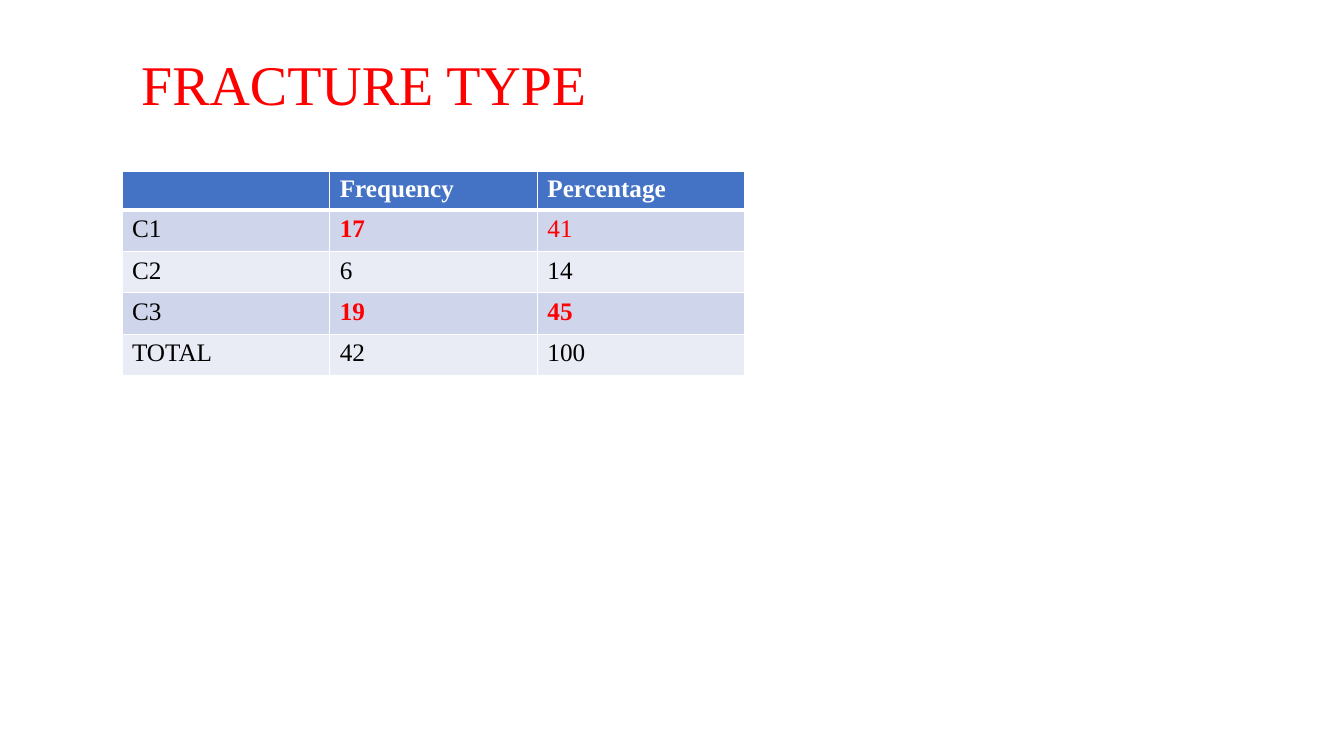
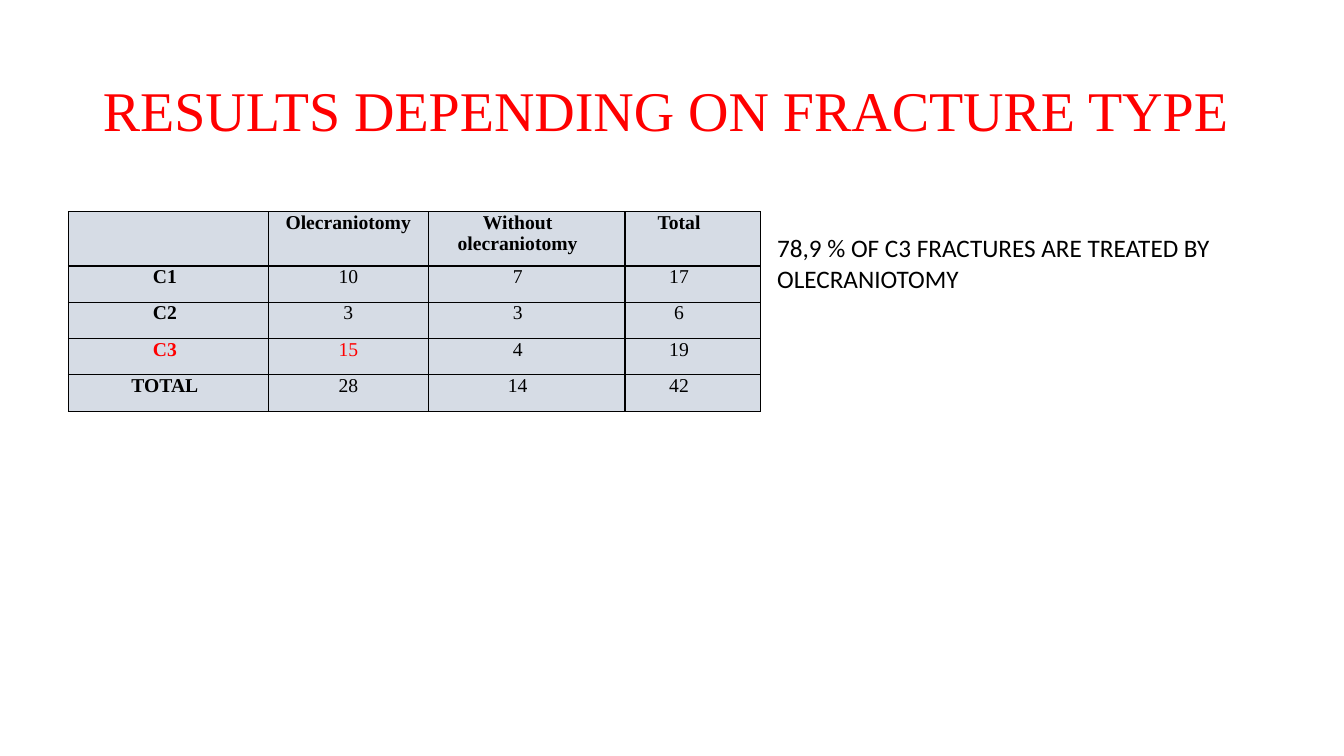
from dataclasses import dataclass
from typing import Optional

from lxml.etree import SubElement
from pptx import Presentation
from pptx.dml.color import RGBColor
from pptx.enum.text import MSO_ANCHOR, MSO_AUTO_SIZE, PP_ALIGN
from pptx.oxml.ns import qn
from pptx.util import Inches, Pt


@dataclass(frozen=True)
class Theme:
    serif: str = "Times New Roman"
    sans: str = "Calibri"
    title_size: int = 40
    body_size: int = 18
    compact_size: int = 14
    red: str = "FF0000"
    black: str = "000000"
    white: str = "FFFFFF"
    header_blue: str = "4472C4"
    band_dark: str = "CFD5EA"
    band_light: str = "E9EBF5"
    grey_blue: str = "D6DCE5"


THEME = Theme()
Box = tuple[float, float, float, float]
Spot = tuple[int, int]


@dataclass(frozen=True)
class Heading:
    text: str
    box: Box
    anchor: MSO_ANCHOR
    line_spacing: float


@dataclass(frozen=True)
class TableStyle:
    size: int
    header_fill: str
    header_color: str
    bands: tuple[str, ...]
    border: str
    header_rule: float  # points, line below the header
    align: PP_ALIGN
    header_inset: float  # inches, above and below header text
    body_inset: float
    left_inset: float


@dataclass(frozen=True)
class ResultTable:
    rows: list[list[str]]
    origin: tuple[float, float]
    widths: list[float]
    heights: list[float]
    right_insets: list[float]
    red: set[Spot]
    bold: set[Spot]
    style: TableStyle


BANDED = TableStyle(THEME.body_size, THEME.header_blue, THEME.white,
                    (THEME.band_dark, THEME.band_light), THEME.white, 3,
                    PP_ALIGN.LEFT, 0.04, 0.05, 0.1)
GRID = TableStyle(THEME.compact_size, THEME.grey_blue, THEME.black,
                  (THEME.grey_blue,), THEME.black, 1,
                  PP_ALIGN.CENTER, 0, 0, 0)


def write(frame, text: str, *, size: int, font: str = THEME.serif,
          color: str = THEME.black, bold: bool = False,
          align: PP_ALIGN = PP_ALIGN.LEFT,
          line_spacing: Optional[float] = None) -> None:
    """Put one formatted paragraph into a text frame."""
    paragraph = frame.paragraphs[0]
    paragraph.alignment = align
    if line_spacing:
        paragraph.line_spacing = line_spacing
    if not text:  # an empty cell still needs a type size for its height
        SubElement(paragraph._p, qn("a:endParaRPr"), sz=str(size * 100))
        return
    run = paragraph.add_run()
    run.text = text
    run.font.size = Pt(size)
    run.font.name = font
    run.font.bold = bold
    run.font.color.rgb = RGBColor.from_string(color)


def add_border(cell, side: str, color: str, points: float) -> None:
    line = SubElement(cell._tc.get_or_add_tcPr(), qn(f"a:ln{side}"),
                      w=str(Pt(points)))
    fill = SubElement(line, qn("a:solidFill"))
    SubElement(fill, qn("a:srgbClr"), val=color)


def add_titled_slide(deck, heading: Heading):
    slide = deck.slides.add_slide(deck.slide_layouts.get_by_name("Title Only"))
    title = slide.shapes.title
    title.left, title.top, title.width, title.height = map(Inches, heading.box)
    frame = title.text_frame
    frame.word_wrap = True
    frame.auto_size = MSO_AUTO_SIZE.NONE
    frame.vertical_anchor = heading.anchor
    write(frame, heading.text, size=THEME.title_size, color=THEME.red,
          line_spacing=heading.line_spacing)
    return slide


def format_cell(cell, text: str, row: int, col: int, data: ResultTable) -> None:
    style = data.style
    is_header = row == 0
    inset = style.header_inset if is_header else style.body_inset
    cell.margin_left = Inches(style.left_inset)
    cell.margin_right = Inches(data.right_insets[col])
    cell.margin_top = cell.margin_bottom = Inches(inset)

    # Borders come before the fill in the cell properties
    rules = {"L": 1, "R": 1,
             "T": style.header_rule if row == 1 else 1,
             "B": style.header_rule if is_header else 1}
    for side, points in rules.items():
        add_border(cell, side, style.border, points)
    band = style.bands[(row - 1) % len(style.bands)]
    cell.fill.solid()
    cell.fill.fore_color.rgb = RGBColor.from_string(
        style.header_fill if is_header else band)

    color = style.header_color if is_header else THEME.black
    write(cell.text_frame, text, size=style.size, align=style.align,
          color=THEME.red if (row, col) in data.red else color,
          bold=is_header or (row, col) in data.bold)


def add_result_table(slide, data: ResultTable) -> None:
    left, top = data.origin
    table = slide.shapes.add_table(
        len(data.rows), len(data.widths), Inches(left), Inches(top),
        Inches(sum(data.widths)), Inches(sum(data.heights))).table
    table.horz_banding = False
    for column, width in zip(table.columns, data.widths):
        column.width = Inches(width)
    for table_row, height in zip(table.rows, data.heights):
        table_row.height = Inches(height)
    for row, values in enumerate(data.rows):
        for col, text in enumerate(values):
            format_cell(table.cell(row, col), text, row, col, data)


def add_note(slide, text: str, box: Box) -> None:
    frame = slide.shapes.add_textbox(*map(Inches, box)).text_frame
    frame.word_wrap = True
    write(frame, text, size=THEME.body_size, font=THEME.sans)


# Content
FREQUENCIES = ResultTable(
    rows=[["", "Frequency", "Percentage"],
          ["C1", "17", "41"],
          ["C2", "6", "14"],
          ["C3", "19", "45"],
          ["TOTAL", "42", "100"]],
    origin=(1.21, 1.7), widths=[2.06] * 3, heights=[0.37] + [0.41] * 4,
    right_insets=[0.1] * 3,
    red={(1, 1), (1, 2), (3, 1), (3, 2)},
    bold={(1, 1), (3, 1), (3, 2)}, style=BANDED)

TREATMENTS = ResultTable(
    rows=[["", "Olecraniotomy", "Without olecraniotomy", "Total"],
          ["C1", "10", "7", "17"],
          ["C2", "3", "3", "6"],
          ["C3", "15", "4", "19"],
          ["TOTAL", "28", "14", "42"]],
    origin=(0.68, 2.1), widths=[1.98, 1.59, 1.95, 1.34],
    heights=[0.54] + [0.36] * 4,
    right_insets=[0.07, 0, 0.18, 0.27],
    red={(3, 0), (3, 1)},
    bold={(row, 0) for row in range(1, 5)}, style=GRID)


def main() -> None:
    deck = Presentation()
    deck.slide_width, deck.slide_height = Inches(13.33), Inches(7.5)

    # Fracture type
    fracture_type = add_titled_slide(deck, Heading(
        "FRACTURE TYPE", (1.3, 0.44, 5.88, 0.77), MSO_ANCHOR.TOP, 1.0))
    add_result_table(fracture_type, FREQUENCIES)

    # Results depending on fracture type
    results = add_titled_slide(deck, Heading(
        "RESULTS DEPENDING ON FRACTURE TYPE", (0.92, 0.4, 11.5, 1.45),
        MSO_ANCHOR.MIDDLE, 0.9))
    add_result_table(results, TREATMENTS)
    add_note(results, "78,9 % OF C3 FRACTURES ARE TREATED BY OLECRANIOTOMY",
             (7.61, 2.26, 5.43, 0.71))

    deck.save("out.pptx")


if __name__ == "__main__":
    main()
